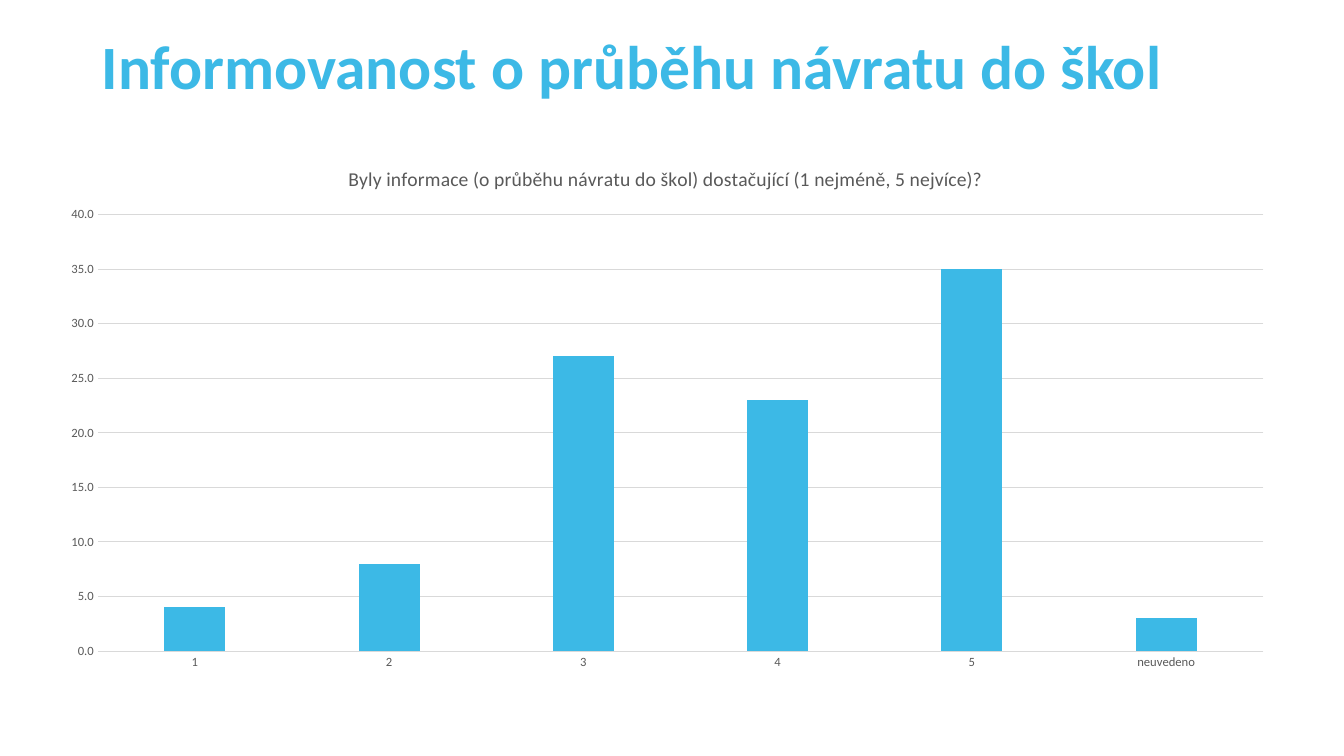
"""Build a slide with a column chart on how well informed people were about the return to school."""
from dataclasses import dataclass

from lxml.etree import SubElement
from pptx import Presentation
from pptx.chart.data import CategoryChartData as ChartData
from pptx.dml.color import RGBColor
from pptx.enum.chart import XL_CHART_TYPE as ChartType, XL_TICK_MARK as TickMark
from pptx.enum.text import MSO_ANCHOR as Anchor
from pptx.oxml import parse_xml
from pptx.oxml.ns import nsdecls, qn
from pptx.util import Inches, Pt

COLORS = {"accent": "3CB9E6", "label": "595959", "rule": "D9D9D9", "text": "000000"}
FONT = "Calibri"
SHARES = {"1": 4, "2": 8, "3": 27, "4": 23, "5": 35, "neuvedeno": 3}


@dataclass(frozen=True)
class Frame:
    left: float
    top: float
    width: float = 0
    height: float = 0

    def lengths(self) -> list:
        return [Inches(value) for value in (self.left, self.top, self.width, self.height)]


HEADING = Frame(0.91, 0.08, 11.5, 1.21)
CHART = Frame(0.46, 1.45, 12.32, 5.31)
PLOT = Frame(0.51, 0.68, 11.56, 4.33)
QUESTION = Frame(2.96, 0.15)


def apply_format(target, formats: dict) -> None:
    for name, value in formats.items():
        setattr(target, name, value)


def style_font(font, size: int, color: str, bold: bool = False) -> None:
    apply_format(font, {"name": FONT, "size": Pt(size), "bold": bold})
    font.color.rgb = RGBColor.from_string(COLORS[color])


def style_rule(line) -> None:
    line.width = Pt(0.75)
    line.color.rgb = RGBColor.from_string(COLORS["rule"])


def place_in_chart(parent, frame: Frame) -> None:
    layout = parent.find(qn("c:layout"))
    if layout is None:
        layout = parse_xml(f"<c:layout {nsdecls('c')}/>")
        parent.insert(0, layout)
    manual = SubElement(layout, qn("c:manualLayout"))
    settings = {"xMode": "edge", "yMode": "edge",
                "x": frame.left / CHART.width, "y": frame.top / CHART.height}
    if frame.width:
        settings = {"layoutTarget": "inner", **settings,
                    "w": frame.width / CHART.width, "h": frame.height / CHART.height}
    for name, value in settings.items():
        SubElement(manual, qn(f"c:{name}")).set("val", str(value))


def add_heading(page) -> None:
    box = page.shapes.add_textbox(*HEADING.lengths())
    apply_format(box.text_frame, {"word_wrap": True, "vertical_anchor": Anchor.MIDDLE})
    para = box.text_frame.paragraphs[0]
    para.line_spacing = 0.9
    span = para.add_run()
    span.text = "Informovanost o průběhu návratu do škol"
    style_font(span.font, 44, "accent", bold=True)


def add_share_chart(page) -> None:
    data = ChartData(number_format="###0.0")
    data.categories = list(SHARES)
    data.add_series("Series 1", list(SHARES.values()))
    chart = page.shapes.add_chart(ChartType.COLUMN_CLUSTERED, *CHART.lengths(), data).chart
    style_font(chart.font, 10, "text")
    apply_format(chart, {"has_legend": False, "has_title": True})

    span = chart.chart_title.text_frame.paragraphs[0].add_run()
    span.text = "Byly informace (o průběhu návratu do škol) dostačující (1 nejméně, 5 nejvíce)?"
    style_font(span.font, 14, "label")
    place_in_chart(chart.element.xpath("c:chart/c:title")[0], QUESTION)
    place_in_chart(chart.element.xpath("c:chart/c:plotArea")[0], PLOT)

    bars = chart.plots[0]
    apply_format(bars, {"gap_width": 219, "overlap": -27, "vary_by_categories": False})
    fill = bars.series[0].format.fill
    fill.solid()
    fill.fore_color.rgb = RGBColor.from_string(COLORS["accent"])

    for axis in (chart.category_axis, chart.value_axis):
        apply_format(axis, {"major_tick_mark": TickMark.NONE, "minor_tick_mark": TickMark.NONE})
        style_font(axis.tick_labels.font, 9, "label")
    style_rule(chart.category_axis.format.line)
    values = chart.value_axis
    apply_format(values, {"minimum_scale": 0, "maximum_scale": 40, "major_unit": 5,
                          "has_major_gridlines": True})
    apply_format(values.tick_labels, {"number_format": "###0.0", "number_format_is_linked": False})
    values.format.line.fill.background()
    style_rule(values.major_gridlines.format.line)


def main() -> None:
    deck = Presentation()
    apply_format(deck, {"slide_width": Inches(13.33), "slide_height": Inches(7.5)})
    page = deck.slides.add_slide(deck.slide_layouts[6])
    add_heading(page)
    add_share_chart(page)
    deck.save("out.pptx")


if __name__ == "__main__":
    main()
